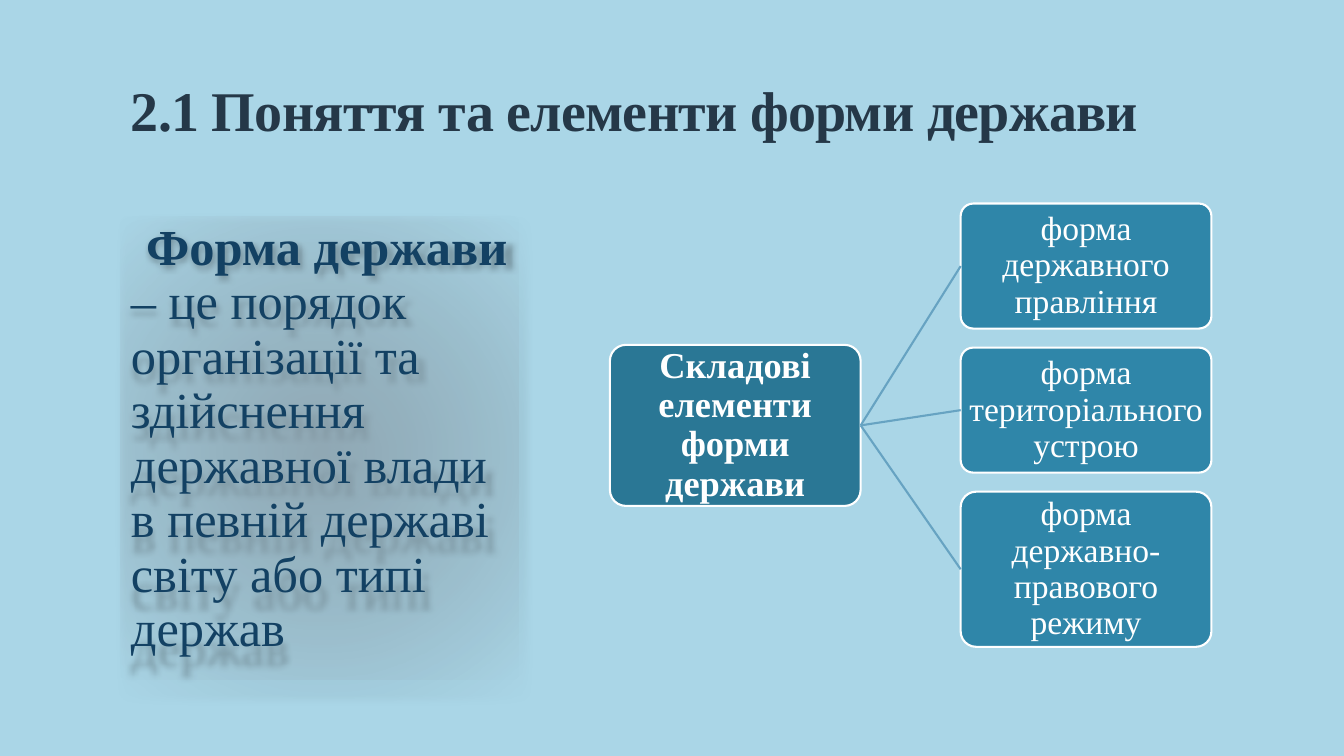
from lxml.etree import SubElement
from pptx import Presentation
from pptx.dml.color import RGBColor
from pptx.enum.shapes import MSO_CONNECTOR, MSO_SHAPE
from pptx.enum.text import MSO_ANCHOR, MSO_AUTO_SIZE, PP_ALIGN
from pptx.oxml import parse_xml
from pptx.oxml.ns import nsdecls, qn
from pptx.util import Cm, Pt

FONT = "Times New Roman"
FORMS = [
    ("форма державного правління", 3.15),
    ("форма територіального устрою", 3.15),
    ("форма державно-правового режиму", 3.91),
]


def rgb(value):
    """Turn a hex string into a colour."""
    return RGBColor.from_string(value)


def format_run(r, size, color, bold=False):
    """Set the font of a run."""
    r.font.name = FONT
    r.font.size = Pt(size)
    r.font.bold = bold
    r.font.color.rgb = rgb(color)


def set_frame(tf, anchor, side, end):
    """Set wrapping, anchor and insets of a text frame."""
    tf.word_wrap = True
    tf.auto_size = MSO_AUTO_SIZE.NONE
    tf.vertical_anchor = anchor
    tf.margin_left = tf.margin_right = Cm(side)
    tf.margin_top = tf.margin_bottom = Cm(end)


def add_title(s, x, y, w, h):
    """Place and format the title placeholder."""
    sp = s.shapes.title
    sp.left, sp.top, sp.width, sp.height = Cm(x), Cm(y), Cm(w), Cm(h)
    tf = sp.text_frame
    tf.text = "2.1 Поняття та елементи форми держави"
    set_frame(tf, MSO_ANCHOR.BOTTOM, 0.25, 0.13)
    p = tf.paragraphs[0]
    p.alignment = PP_ALIGN.LEFT
    p.line_spacing = 0.85
    r = p.runs[0]
    format_run(r, 40, "253848", True)
    r.font._element.set("spc", "-50")


def add_glow(sp):
    """Give a shape a fading radial fill and a soft shadow."""
    fill = parse_xml(
        f'<a:gradFill {nsdecls("a")} rotWithShape="1"><a:gsLst>'
        '<a:gs pos="0"><a:srgbClr val="949FA9"><a:alpha val="50000"/></a:srgbClr></a:gs>'
        '<a:gs pos="100000"><a:srgbClr val="949FA9"><a:alpha val="0"/></a:srgbClr></a:gs>'
        '</a:gsLst><a:path path="circle"><a:fillToRect l="50000" t="50000" r="50000" b="50000"/>'
        '</a:path></a:gradFill>')
    effects = parse_xml(
        f'<a:effectLst {nsdecls("a")}><a:outerShdw blurRad="63500" dist="12700" dir="5400000" '
        'sx="102000" sy="104000" algn="tl" rotWithShape="0"><a:srgbClr val="000000">'
        '<a:alpha val="32000"/></a:srgbClr></a:outerShdw></a:effectLst>')
    props = sp._element.spPr
    props.find(qn("a:prstGeom")).addnext(fill)
    props.find(qn("a:ln")).addnext(effects)


def add_definition(s, x, y, w, h):
    """Add the definition panel."""
    sp = s.shapes.add_shape(MSO_SHAPE.RECTANGLE, Cm(x), Cm(y), Cm(w), Cm(h))
    sp.line.fill.background()
    add_glow(sp)
    tf = sp.text_frame
    set_frame(tf, MSO_ANCHOR.TOP, 0, 0.13)
    p = tf.paragraphs[0]
    p.alignment = PP_ALIGN.LEFT
    p.line_spacing = 0.9
    p.space_before, p.space_after = Pt(12), Pt(2)
    for text, bold in [
        ("Форма держави ", True),
        ("– це порядок організації та здійснення державної влади "
         "в певній державі світу або типі держав", False),
    ]:
        r = p.add_run()
        r.text = text
        format_run(r, 36, "134163", bold)
    props = p._p.get_or_add_pPr()
    props.set("marL", str(Cm(0.25)))
    props.set("indent", str(Cm(-0.25)))
    SubElement(props, qn("a:buChar")).set("char", " ")


def add_node(s, x, y, w, h, text, fill, size, bold=False):
    """Add one rounded box of the tree."""
    sp = s.shapes.add_shape(MSO_SHAPE.ROUNDED_RECTANGLE, Cm(x), Cm(y), Cm(w), Cm(h))
    sp.adjustments[0] = 0.1
    sp.shadow.inherit = False
    sp.fill.solid()
    sp.fill.fore_color.rgb = rgb(fill)
    sp.line.color.rgb = rgb("FFFFFF")
    sp.line.width = Pt(1.5)
    tf = sp.text_frame
    tf.text = text
    set_frame(tf, MSO_ANCHOR.MIDDLE, 0.05, 0.05)
    p = tf.paragraphs[0]
    p.alignment = PP_ALIGN.CENTER
    p.line_spacing = 0.9
    format_run(p.runs[0], size, "FFFFFF", bold)
    return sp


def add_branch(s, root, child):
    """Join the root to a child box."""
    line = s.shapes.add_connector(MSO_CONNECTOR.STRAIGHT, 0, 0, 0, 0)
    line.begin_connect(root, 3)
    line.end_connect(child, 1)
    line.line.color.rgb = rgb("67A3C2")
    line.line.width = Pt(1.5)
    SubElement(line._element.spPr, qn("a:effectLst"))


def add_tree(s, x, y, w):
    """Add the tree of the elements of the form of state."""
    node_w, gap = 6.32, 0.48
    root = add_node(s, x, y + 3.56, node_w, 4.06, "Складові елементи форми держави",
                    "2A7795", 26, True)
    top = y
    for text, h in FORMS:
        child = add_node(s, x + w - node_w, top, node_w, h, text, "2F86A9", 24)
        add_branch(s, root, child)
        top += h + gap


def main():
    """Build and save the slide."""
    prs = Presentation()
    prs.slide_width, prs.slide_height = Cm(33.87), Cm(19.05)
    s = prs.slides.add_slide(prs.slide_layouts[5])
    s.background.fill.solid()
    s.background.fill.fore_color.rgb = rgb("AAD6E7")
    add_title(s, 3.05, 0.79, 27.94, 2.95)
    add_definition(s, 3.05, 5.46, 10.03, 11.66)
    add_tree(s, 15.37, 5.13, 15.16)
    prs.save("out.pptx")


if __name__ == "__main__":
    main()
